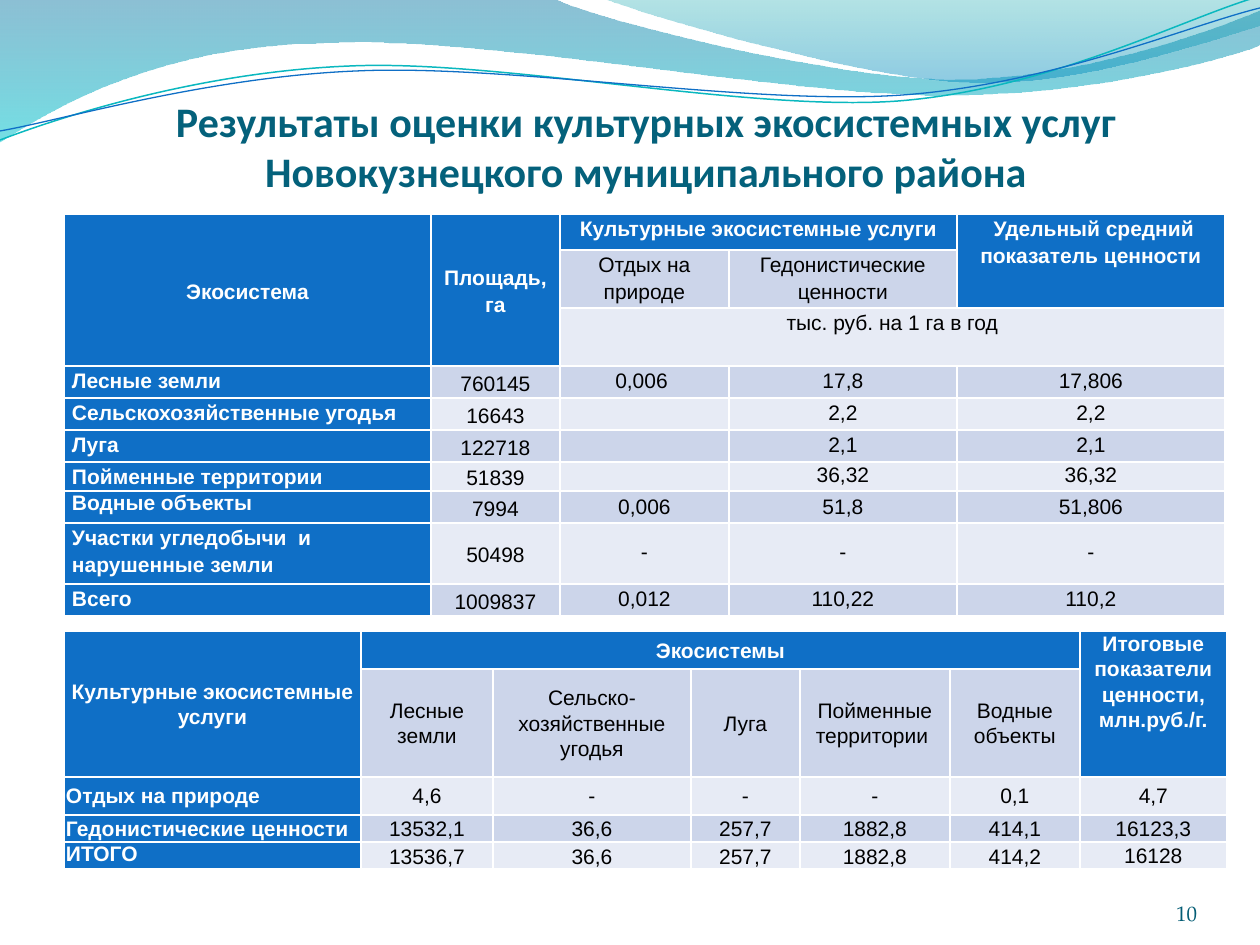
import pptx
import pptx.util
import pptx.dml.color
import pptx.enum.text
import pptx.oxml
import pptx.oxml.ns
from lxml import etree

RGB = pptx.dml.color.RGBColor
WHITE = RGB(0xFF, 0xFF, 0xFF)
BLACK = RGB(0, 0, 0)
BLUE = RGB(0x0F, 0x6F, 0xC6)
BAND = RGB(0xCC, 0xD5, 0xEA)
PALE = RGB(0xE7, 0xEB, 0xF5)
TITLE = RGB(0x04, 0x61, 0x7B)
PAGE = RGB(0x04, 0x5D, 0x75)
TEAL = RGB(0x0A, 0xB8, 0xBF)
STEEL = RGB(0x00, 0x74, 0xA1)
CYAN = RGB(0x00, 0xC6, 0xCF)
GREEN = RGB(0x00, 0xA1, 0xA9)
SKY = RGB(0x00, 0x8B, 0xBF)

PX = 914400 / 126
ALIGN = pptx.enum.text.PP_ALIGN
ANCHOR = pptx.enum.text.MSO_ANCHOR
Pt = pptx.util.Pt
qn = pptx.oxml.ns.qn


def put(frame, text, size=12, font="Arial", color=BLACK, bold=False,
        align=ALIGN.CENTER, lead=1.0, after=0):
    frame.word_wrap = True
    para = frame.paragraphs[0]
    para.alignment = align
    para.line_spacing = lead
    para.space_after = Pt(after)
    if text:
        run = para.add_run()
        run.text = text
        run.font.size = Pt(size)
        run.font.name = font
        run.font.bold = bold
        run.font.color.rgb = color
    etree.SubElement(para._p, qn("a:endParaRPr"), sz=str(size * 100))


def draw(start, steps, close):
    pen = slide.shapes.build_freeform(int(start[0] * PX), int(start[1] * PX))
    ends = [(int(step[-2] * PX), int(step[-1] * PX)) for step in steps]
    pen.add_line_segments(ends, close=close)
    shape = pen.convert_to_shape()
    shape.shadow.inherit = False
    for node, step in zip(list(shape.element.iter(qn("a:lnTo"))), steps):
        if len(step) == 6:
            node.clear()
            bend = etree.Element(qn("a:cubicBezTo"))
            for x, y in zip(step[::2], step[1::2]):
                etree.SubElement(bend, qn("a:pt"), x=str(int(x * PX) - shape.left),
                                 y=str(int(y * PX) - shape.top))
            node.getparent().replace(node, bend)
    return shape


deck = pptx.Presentation()
deck.slide_width = int(1260 * PX)
deck.slide_height = int(945 * PX)
slide = deck.slides.add_slide(deck.slide_layouts[6])

waves = [
    ((0, 0), [(554, -1), (600, 21, 837, 79, 955, 79), (1075, 79, 1207, 33, 1260, 11),
              (1261, 45), (1239, 55, 1096, 96, 940, 95), (781, 95, 481, 35, 324, 43),
              (163, 45, 58, 105, -1, 142)], [(STEEL, 45), (CYAN, 55)]),
    ((604, -1), [(641, 14, 859, 78, 969, 82), (1079, 87, 1211, 40, 1260, 26),
                 (1260, 0)], [(GREEN, 30), (SKY, 45)]),
]
for start, steps, tints in waves:
    wave = draw(start, steps, True)
    wave.line.fill.background()
    wave.fill.gradient()
    wave.fill.gradient_angle = 270
    for stop, (color, alpha) in zip(wave.fill.gradient_stops, tints):
        stop.color.rgb = color
    for node, (color, alpha) in zip(wave.element.spPr.iter(qn("a:srgbClr")), tints):
        etree.SubElement(node, qn("a:alpha"), val=str(alpha * 1000))

lines = [
    ((0, 140), [(60, 117, 199, 72, 349, 66), (498, 59, 747, 112, 898, 101),
                (1050, 89, 1182, 19, 1257, -3)], TEAL, 0.85),
    ((0, 131), [(59, 121, 207, 77, 357, 71), (508, 64, 752, 106, 903, 95),
                (1053, 84, 1187, 26, 1260, 8)], BLUE, 0.75),
]
for start, steps, color, width in lines:
    line = draw(start, steps, False)
    line.fill.background()
    line.line.color.rgb = color
    line.line.width = Pt(width)

labels = [
    ((44, 96, 1204, 100), 6, "Результаты оценки культурных экосистемных услуг "
     "Новокузнецкого муниципального района",
     dict(size=24, font="Calibri", color=TITLE, bold=True)),
    ((1092, 876, 105, 50), 0, "10",
     dict(font="TeX Gyre Pagella", color=PAGE, align=ALIGN.RIGHT)),
]
for place, inset, text, style in labels:
    frame = slide.shapes.add_textbox(*[int(n * PX) for n in place]).text_frame
    frame.margin_left = frame.margin_right = frame.margin_bottom = 0
    frame.margin_top = int(inset * PX)
    frame.vertical_anchor = ANCHOR.BOTTOM
    put(frame, text, **style)

areas = [
    ["Экосистема", "Площадь, га", "Культурные экосистемные услуги", "",
     " Удельный средний показатель ценности"],
    ["", "", "Отдых на природе", "Гедонистические ценности", ""],
    ["", "", "тыс. руб. на 1 га в год", "", ""],
    ["Лесные земли", "760145", "0,006 ", "17,8", "17,806"],
    ["Сельскохозяйственные угодья", "16643", "", "2,2", "2,2"],
    ["Луга", "122718", "", "2,1", "2,1"],
    ["Пойменные территории", "51839", "", "36,32", "36,32"],
    ["Водные объекты", "7994", "0,006", "51,8", "51,806"],
    ["Участки угледобычи  и  нарушенные земли", "50498", "‑", "‑", "‑"],
    ["Всего", "1009837", "0,012", "110,22", "110,2"],
]
values = [
    ["Культурные экосистемные услуги", "Экосистемы", "", "", "", "",
     "Итоговые показатели ценности, млн.руб./г."],
    ["", "Лесные земли", "Сельско-хозяйственные угодья", "Луга",
     "Пойменные территории ", "Водные объекты", ""],
    ["Отдых на природе", "4,6", "-", "-", "-", "0,1", "4,7"],
    ["Гедонистические ценности", "13532,1", "36,6", "257,7", "1882,8", "414,1", "16123,3"],
    ["ИТОГО", "13536,7", "36,6", "257,7", "1882,8", "414,2", "16128"],
]
grids = [
    (areas, 214, [367, 129, 169, 228, 268], [36, 30, 32, 32, 32, 32, 23, 32, 61, 32],
     [(0, 0, 2, 0), (0, 1, 2, 1), (0, 2, 0, 3), (0, 4, 1, 4), (2, 2, 2, 4)]),
    (values, 631, [297, 132, 198, 109, 150, 130, 147], [38, 63, 38, 27, 25],
     [(0, 0, 1, 0), (0, 1, 0, 5), (0, 6, 1, 6)]),
]
for data, top, cols, rows, spans in grids:
    grid = slide.shapes.add_table(len(rows), len(cols), int(64 * PX), int(top * PX),
                                  int(sum(cols) * PX), int(sum(rows) * PX)).table
    grid.first_col = True
    for c, width in enumerate(cols):
        grid.columns[c].width = int(width * PX)
    for r, height in enumerate(rows):
        grid.rows[r].height = int(height * PX)
    for a, b, c, d in spans:
        grid.cell(a, b).merge(grid.cell(c, d))
    head = 3 if data is areas else 2
    for r, row in enumerate(data):
        for c, text in enumerate(row):
            cell = grid.cell(r, c)
            blue = r == 0 or c == 0
            after = 0
            if data is areas:
                pad = 8
                lead = 1.15 if r < head or c < 2 else 0.9
                if r == 7 and c != 1:
                    lead = 1.0
                high = c == 0 if r >= head else r > 0 or c > 1
                anchor = ANCHOR.TOP if high else ANCHOR.MIDDLE
            else:
                pad = 9 if c == 6 or (r == 1 and c > 2) else 2
                lead = 1.07
                anchor = ANCHOR.MIDDLE
                if (r, c) == (0, 6):
                    anchor = ANCHOR.TOP
                elif (r, c) == (4, 0):
                    lead, after = 0.9, 10
                elif r == 4 and c < 6:
                    anchor = ANCHOR.BOTTOM
            cell.margin_left = cell.margin_right = int(pad * PX)
            cell.margin_top = cell.margin_bottom = 0
            cell.vertical_anchor = anchor
            cell.fill.solid()
            cell.fill.fore_color.rgb = BLUE if blue else BAND if r % 2 else PALE
            put(cell.text_frame, text, color=WHITE if blue else BLACK, bold=blue,
                align=ALIGN.LEFT if c == 0 and r >= head else ALIGN.CENTER,
                lead=lead, after=after)

deck.save("out.pptx")
